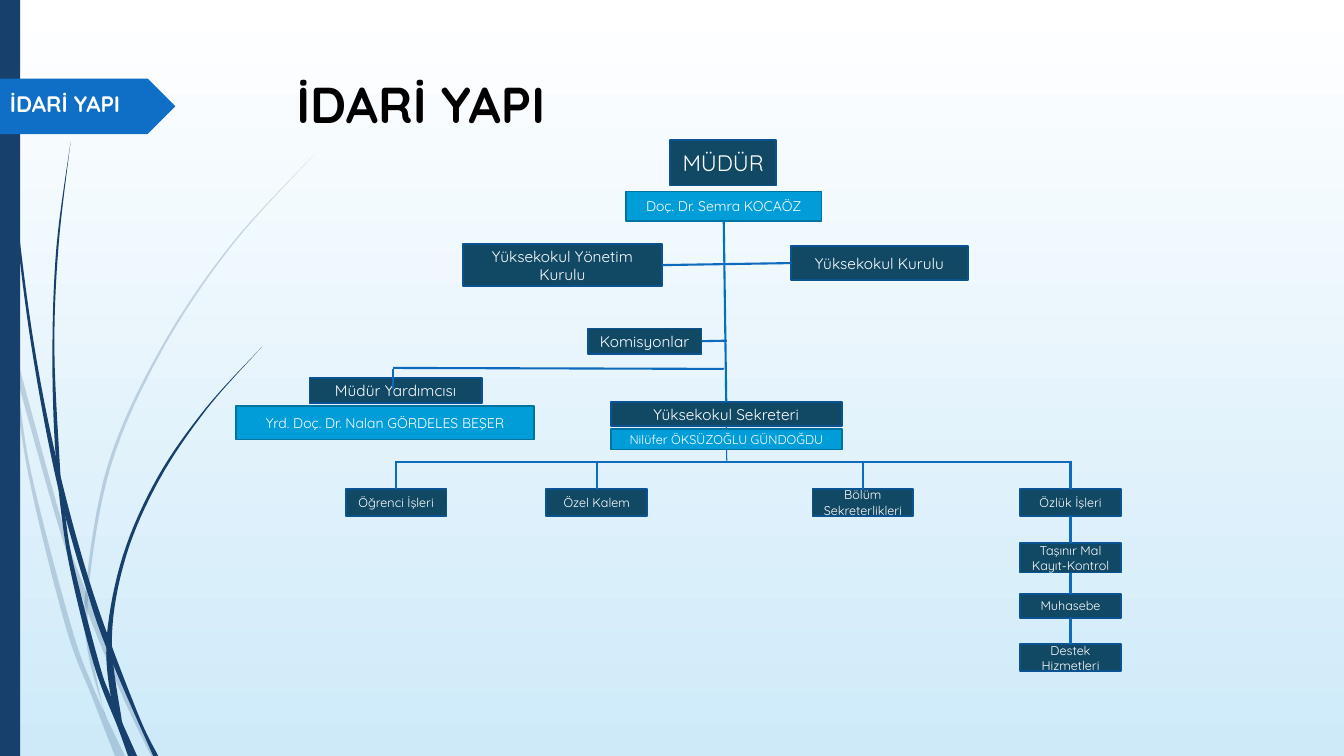
from dataclasses import dataclass

from lxml.etree import SubElement
from pptx import Presentation
from pptx.dml.color import RGBColor as RGB
from pptx.enum.shapes import MSO_CONNECTOR as Conn, MSO_SHAPE as Kind
from pptx.enum.text import MSO_ANCHOR as Anchor, MSO_AUTO_SIZE as Fit, PP_ALIGN as Align
from pptx.oxml.ns import qn
from pptx.util import Inches, Pt


@dataclass(frozen=True)
class Theme:
    font: str = "Quicksand"
    navy: str = "17406D"
    tag: str = "0F6FC6"
    unit: tuple = ("114864", "0B5292")    # fill, border
    person: tuple = ("009DD9", "0074A1")
    trunk: str = "0070C0"
    wire: str = "0E6ABD"
    white: str = "FFFFFF"
    black: str = "000000"
    sky: str = "CEEAF9"
    title: int = 36
    head: int = 16
    mid: int = 11
    name: int = 10
    small: int = 9


T = Theme()
TOP, LEFT, BOTTOM, RIGHT = range(4)
COLS, ROWS = 133.33, 75    # grid cells of a tenth of an inch

# Grass blades: the points down one edge, then up the other
PALE = [
    ([(1.4, 34.5), (6.2, 52), (8.5, 58.6), (12.7, 69.2), (15.5, 75)],
     [(15, 75), (12.3, 69.4), (8.8, 61), (5.8, 52.2), (1.7, 37.6)]),
    ([(1.1, 35), (2.8, 47), (6.5, 62.1), (9.2, 69.3), (11.4, 75)],
     [(12.4, 75), (9.3, 68.3), (7, 61.9), (3.1, 46.9), (1.7, 37.6)]),
    ([(31.2, 15.3), (22.8, 24.4), (15.8, 34.8), (10.7, 46.1), (8.5, 58.4),
      (8.7, 64.6), (10.5, 71.1)],
     [(10.3, 70.6), (9.1, 64.6), (8.8, 58.4), (11, 46.2), (16, 34.9),
      (22.9, 24.5), (31.2, 15.3)]),
]
DARK = [
    ([(0.4, 0), (0.8, 10.9), (1.9, 23.2), (3.6, 35.5), (6, 47.2), (9.3, 59),
      (13.6, 70.6), (15.7, 75)],
     [(15.2, 75), (11.1, 65.6), (8.8, 59.2), (5.7, 48.1), (3.3, 35.5),
      (1.7, 23.3), (0.7, 11), (0.3, 0)]),
    ([(5.7, 47.7), (6.8, 55.7), (9.3, 65.9), (11.7, 72.2), (12.7, 75)],
     [(13.6, 75), (11, 69.1), (9.8, 65.7), (7.2, 55.6), (6.4, 50.5)]),
    ([(7, 14.1), (5.6, 24.5), (5.2, 34.9), (5.5, 44.9), (6.4, 50.5)],
     [(6, 47.2), (5.4, 34.9), (5.8, 24.5), (7, 14.1)]),
    ([(26, 34.4), (20.4, 40.5), (15.6, 47.4), (12.2, 55.1), (10.6, 63.1),
      (11, 69.1), (12.2, 71.9)],
     [(12.1, 71.6), (11.1, 63.3), (12.5, 55.2), (15.8, 47.6),
      (20.5, 40.6), (26, 34.4)]),
]


def cell(num):
    return Inches(num / 10)


def paint(shape, color):
    shape.shadow.inherit = False
    shape.fill.solid()
    shape.fill.fore_color.rgb = RGB.from_string(color)
    shape.line.fill.background()


def write(frame, text, size=T.mid, color=T.white, bold=False,
          align=Align.LEFT, anchor=Anchor.TOP):
    frame.word_wrap = True
    frame.auto_size = Fit.NONE
    frame.vertical_anchor = anchor
    para = frame.paragraphs[0]
    para.alignment = align
    run = para.add_run()
    run.text = text
    font = run.font
    font.name, font.size, font.bold = T.font, Pt(size), bold
    font.color.rgb = RGB.from_string(color)


def block(slide, box, color, kind=Kind.RECTANGLE):
    shape = slide.shapes.add_shape(kind, *map(cell, box))
    paint(shape, color)
    return shape


def node(slide, text, box, size=T.mid, look=T.unit):
    shape = block(slide, box, look[0])
    shape.line.color.rgb = RGB.from_string(look[1])
    shape.line.width = Pt(1.25)
    write(shape.text_frame, text, size=size, align=Align.CENTER, anchor=Anchor.MIDDLE)
    return shape


def link(slide, start, end, color=T.wire, width=1.5):
    """Each end is a grid point or a (shape, side) pair."""
    line = slide.shapes.add_connector(Conn.STRAIGHT, 0, 0, 0, 0)
    if isinstance(start[0], (int, float)):
        line.begin_x, line.begin_y = map(cell, start)
    else:
        line.begin_connect(*start)
    if isinstance(end[0], (int, float)):
        line.end_x, line.end_y = map(cell, end)
    else:
        line.end_connect(*end)
    line.line.color.rgb = RGB.from_string(color)
    line.line.width = Pt(width)
    SubElement(line.element.spPr, qn("a:effectLst"))


def smooth(knots, steps=8):
    """Points of a Catmull-Rom curve through the knots."""
    ends = [knots[0], *knots, knots[-1]]
    out = []
    for a, b, c, d in zip(ends, ends[1:], ends[2:], ends[3:]):
        for i in range(steps):
            t = i / steps
            out.append(tuple(
                q + t * (r - p + t * (2 * p - 5 * q + 4 * r - s
                                      + t * (3 * (q - r) + s - p))) / 2
                for p, q, r, s in zip(a, b, c, d)))
    return out + [knots[-1]]


def blade(slide, edges, alpha=None):
    first, *rest = [(cell(x), cell(y)) for edge in edges for x, y in smooth(edge)]
    pen = slide.shapes.build_freeform(*first)
    pen.add_line_segments(rest, close=True)
    shape = pen.convert_to_shape()
    paint(shape, T.navy)
    if alpha:
        tint = shape.element.spPr.find(qn("a:solidFill"))[0]
        SubElement(tint, qn("a:alpha")).set("val", str(alpha * 1000))


def scene(slide):
    fill = slide.background.fill
    fill.gradient()
    fill.gradient_angle = 270
    for stop, color in zip(fill.gradient_stops, (T.white, T.sky)):
        stop.color.rgb = RGB.from_string(color)
    for edges in PALE:
        blade(slide, edges, alpha=20)
    for edges in DARK:
        blade(slide, edges)
    block(slide, (0, 0, 2, ROWS), T.navy)
    block(slide, (0, 7.8, 17.4, 5.5), T.tag, Kind.PENTAGON)


def heads(slide):
    title = slide.shapes.title
    title.left, title.top, title.width, title.height = map(cell, (28.4, 6.8, 97.5, 14))
    write(title.text_frame, "İDARİ YAPI", size=T.title, color=T.black, bold=True)
    label = slide.shapes.add_textbox(*map(cell, (0, 8.5, 16.9, 3.7)))
    write(label.text_frame, "İDARİ YAPI", size=T.head, bold=True)


def chart(slide):
    # Management
    node(slide, "MÜDÜR", (66.5, 13.9, 10.5, 4.5), T.head)
    chief = node(slide, "Doç. Dr. Semra KOCAÖZ", (62.1, 19, 19.4, 2.9), T.name, T.person)
    board = node(slide, "Yüksekokul Yönetim Kurulu", (45.9, 24.2, 19.8, 4.2))
    school = node(slide, "Yüksekokul Kurulu", (78.5, 24.4, 17.5, 3.4))
    panel = node(slide, "Komisyonlar", (58.3, 32.6, 11.3, 2.5))
    node(slide, "Müdür Yardımcısı", (30.7, 37.5, 17.1, 2.5))
    clerk = node(slide, "Yüksekokul Sekreteri", (60.6, 39.9, 22.9, 2.4))
    link(slide, (chief, BOTTOM), (clerk, TOP), T.trunk)
    link(slide, (board, RIGHT), (school, LEFT))
    link(slide, (panel, RIGHT), (72.1, 33.8))
    link(slide, (39, 36.5), (71.8, 36.6))
    link(slide, (39, 36.6), (39, 38.6))
    link(slide, (clerk, BOTTOM), (72.1, 45.7), width=0.75)
    node(slide, "Yrd. Doç. Dr. Nalan GÖRDELES BEŞER", (23.4, 40.3, 29.6, 3.3),
         T.name, T.person)
    node(slide, "Nilüfer ÖKSÜZOĞLU GÜNDOĞDU", (60.6, 42.6, 22.9, 2), T.small, T.person)

    # Offices under one bar
    link(slide, (39.3, 45.8), (106.2, 45.8))
    for text, left in (("Öğrenci İşleri", 34.3), ("Özel Kalem", 54.2),
                       ("Bölüm Sekreterlikleri", 80.6), ("Özlük İşleri", 101.2)):
        last = node(slide, text, (left, 48.5, 10, 2.7), T.small)
        link(slide, (left + 5, 45.7), (last, TOP))

    # Chain below the last office
    for text, top, high in (("Taşınır Mal Kayıt-Kontrol", 53.9, 2.9),
                            ("Muhasebe", 58.9, 2.4), ("Destek Hizmetleri", 63.9, 2.7)):
        unit = node(slide, text, (101.2, top, 10, high), T.small)
        link(slide, (last, BOTTOM), (unit, TOP))
        last = unit


def main():
    deck = Presentation()
    deck.slide_width, deck.slide_height = cell(COLS), cell(ROWS)
    slide = deck.slides.add_slide(deck.slide_layouts[5])
    scene(slide)
    heads(slide)
    chart(slide)
    deck.save("out.pptx")


if __name__ == "__main__":
    main()
